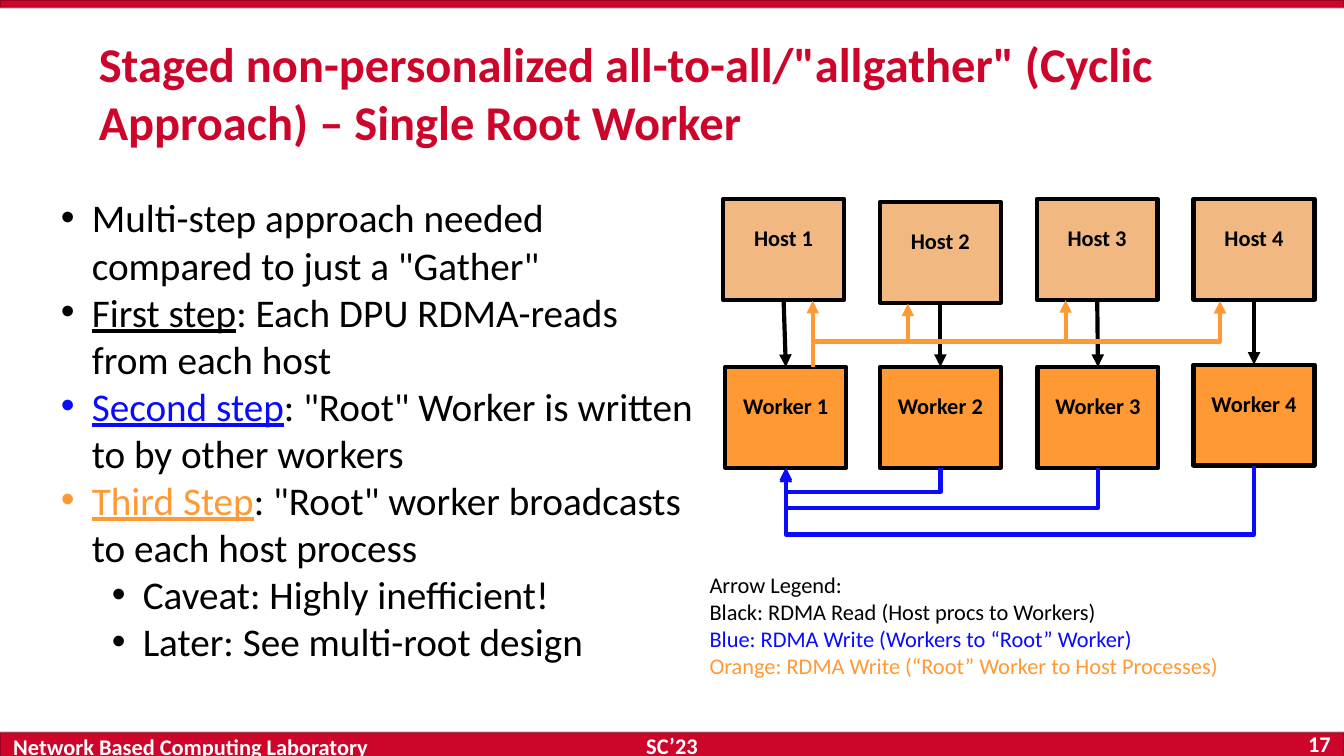
from dataclasses import dataclass

from lxml.etree import SubElement
from pptx import Presentation
from pptx.dml.color import RGBColor
from pptx.enum.shapes import MSO_CONNECTOR, MSO_SHAPE
from pptx.enum.text import MSO_ANCHOR, PP_ALIGN
from pptx.oxml.ns import qn
from pptx.util import Pt


@dataclass(frozen=True)
class Theme:
    font: str = "Calibri"
    red: str = "CD052B"
    black: str = "000000"
    white: str = "FFFFFF"
    blue: str = "0A0AFF"
    orange: str = "FF9933"
    peach: str = "F1B981"
    title: float = 26
    body: float = 21
    small: float = 12
    stroke: float = 2.25


@dataclass(frozen=True)
class Box:
    left: float
    top: float
    width: float
    height: float

    @property
    def center(self) -> float:
        return self.left + self.width / 2

    @property
    def bottom(self) -> float:
        return self.top + self.height

    def lengths(self) -> list:
        return [Pt(value) for value in (self.left, self.top, self.width, self.height)]


@dataclass(frozen=True)
class Run:
    text: str
    color: str = "000000"
    underline: bool = False


@dataclass(frozen=True)
class Line:
    runs: tuple
    level: int = 0


THEME = Theme()
NODE_WIDTH, NODE_HEIGHT = 64.8, 54
INDENTS = (16.6, 43.9)
HANGING = 16.6

HOSTS = [Box(387.4 + 84 * i, top, NODE_WIDTH, NODE_HEIGHT)
         for i, top in enumerate((106.6, 108.2, 106.6, 106.6))]
WORKERS = [Box(left, top, NODE_WIDTH, NODE_HEIGHT) for left, top in
           ((388.6, 196.6), (471.4, 196.6), (555.8, 196.6), (639.4, 195.4))]

BODY = [
    Line((Run('Multi-step approach needed compared to just a "Gather"'),)),
    Line((Run("First step", underline=True), Run(": Each DPU RDMA-reads from each host"))),
    Line((Run("Second step", THEME.blue, True),
          Run(': "Root" Worker is written to by other workers'))),
    Line((Run("Third Step", THEME.orange, True),
          Run(': "Root" worker broadcasts to each host process'))),
    Line((Run("Caveat: Highly inefficient!"),), 1),
    Line((Run("Later: See multi-root design"),), 1),
]
LEGEND = [
    Line((Run("Arrow Legend:"),)),
    Line((Run("Black: RDMA Read (Host procs to Workers)"),)),
    Line((Run("Blue: RDMA Write (Workers to “Root” Worker)", THEME.blue),)),
    Line((Run("Orange: RDMA Write (“Root” Worker to Host Processes)", THEME.orange),)),
]


def apply(target, values: dict) -> None:
    for name, value in values.items():
        setattr(target, name, value)


def add_bullet(paragraph, level: int) -> None:
    paragraph.level = level
    properties = paragraph._p.get_or_add_pPr()
    properties.set("marL", str(Pt(INDENTS[level])))
    properties.set("indent", str(-Pt(HANGING)))
    SubElement(properties, qn("a:buFont"), typeface="Arial")
    SubElement(properties, qn("a:buChar"), char="•")


def add_text(slide, box: Box, lines: list, size: float, bold: bool = False,
             align=PP_ALIGN.LEFT, anchor=MSO_ANCHOR.TOP, bullets: bool = False) -> None:
    frame = slide.shapes.add_textbox(*box.lengths()).text_frame
    apply(frame, {"word_wrap": True, "vertical_anchor": anchor})
    if bullets:
        apply(frame, {"margin_left": Pt(5), "margin_right": Pt(5),
                      "margin_top": Pt(3), "margin_bottom": Pt(3)})
    for index, line in enumerate(lines):
        paragraph = frame.add_paragraph() if index else frame.paragraphs[0]
        paragraph.alignment = align
        if bullets:
            add_bullet(paragraph, line.level)
        for part in line.runs:
            run = paragraph.add_run()
            run.text = part.text
            apply(run.font, {"name": THEME.font, "size": Pt(size), "bold": bold,
                             "underline": part.underline})
            run.font.color.rgb = RGBColor.from_string(part.color)


def add_rectangle(slide, box: Box, fill: str, width: float):
    shape = slide.shapes.add_shape(MSO_SHAPE.RECTANGLE, *box.lengths())
    shape.shadow.inherit = False
    shape.fill.solid()
    shape.fill.fore_color.rgb = RGBColor.from_string(fill)
    shape.line.color.rgb = RGBColor.from_string(THEME.black)
    shape.line.width = Pt(width)
    return shape


def add_bar(slide, box: Box) -> None:
    shape = add_rectangle(slide, box, THEME.red, 1)
    color = shape.line._get_or_add_ln().find(".//" + qn("a:srgbClr"))
    SubElement(color, qn("a:alpha"), val="25000")


def add_node(slide, box: Box, name: str, fill: str) -> None:
    add_rectangle(slide, box, fill, THEME.stroke)
    label = Box(box.left, box.top + 10, box.width, 21.6)
    add_text(slide, label, [Line((Run(name),))], THEME.small, True, PP_ALIGN.CENTER)


def add_arrow(slide, start: tuple, end: tuple, color: str,
              kind=MSO_CONNECTOR.STRAIGHT, bend: float = 0):
    connector = slide.shapes.add_connector(kind, *map(Pt, start + end))
    connector.line.color.rgb = RGBColor.from_string(color)
    connector.line.width = Pt(THEME.stroke)
    SubElement(connector.line._get_or_add_ln(), qn("a:tailEnd"), type="triangle")
    properties = connector._element.spPr
    SubElement(properties, qn("a:effectLst"))
    if bend:
        adjustments = properties.find(qn("a:prstGeom")).get_or_add_avLst()
        SubElement(adjustments, qn("a:gd"), name="adj1", fmla=f"val {round(bend * 100000)}")
    return connector


def add_return_arrow(slide, source: Box, root: Box, drop: float) -> None:
    """Run down from the source, left, and up to the root: an elbow turned by 90 degrees."""
    depth, span = 1, source.center - root.center
    middle_x = (source.center + root.center) / 2
    left, top = middle_x - depth / 2, source.bottom + depth / 2 - span / 2
    connector = add_arrow(slide, (left, top), (left + depth, top + span), THEME.blue,
                          MSO_CONNECTOR.ELBOW, drop / depth)
    connector._element.spPr.find(qn("a:xfrm")).set("rot", str(90 * 60000))


def main() -> None:
    presentation = Presentation()
    apply(presentation, {"slide_width": Pt(720), "slide_height": Pt(405)})
    slide = presentation.slides.add_slide(presentation.slide_layouts[6])

    # Bars and footer
    add_bar(slide, Box(0, 392.4, 720, 13.5))
    add_bar(slide, Box(0, 0, 720, 4.2))
    for box, text, align in (
        (Box(672.4, 391.9, 47.6, 13), "17", PP_ALIGN.RIGHT),
        (Box(0, 391.9, 217.4, 16.2), "Network Based Computing Laboratory", PP_ALIGN.LEFT),
        (Box(270.7, 394.4, 178.6, 10), "SC’23", PP_ALIGN.CENTER),
    ):
        add_text(slide, box, [Line((Run(text, THEME.white),))], THEME.small, True,
                 align, MSO_ANCHOR.MIDDLE)

    # Title and bullets
    title = 'Staged non-personalized all-to-all/"allgather" (Cyclic Approach) – Single Root Worker'
    add_text(slide, Box(45.9, 14.6, 637, 70), [Line((Run(title, THEME.red),))],
             THEME.title, True)
    add_text(slide, Box(27.6, 100.8, 352.8, 262), BODY, THEME.body, bullets=True)

    # Hosts and workers
    for name, boxes, fill in (("Host", HOSTS, THEME.peach), ("Worker", WORKERS, THEME.orange)):
        for number, box in enumerate(boxes, 1):
            add_node(slide, box, f"{name} {number}", fill)

    # Reads from each host
    for host, worker in zip(HOSTS, WORKERS):
        add_arrow(slide, (host.center, host.bottom), (worker.center, worker.top), THEME.black)

    # Writes to the root worker
    root = WORKERS[0]
    for worker, drop in zip(WORKERS[1:], (13, 21.6, 37.3)):
        add_return_arrow(slide, worker, root, drop)

    # Broadcast from the root worker
    trunk, branch = 435.4, 183
    add_arrow(slide, (trunk, root.top), (trunk, 161.2), THEME.orange)
    for x, y in ((486.4, 162.7), (570.9, 160.8), (653.6, 161.3)):
        add_arrow(slide, (trunk, branch), (x, y), THEME.orange, MSO_CONNECTOR.ELBOW, 1)

    # Legend
    add_text(slide, Box(373, 302.4, 337, 65.4), LEGEND, THEME.small)
    presentation.save("out.pptx")


if __name__ == "__main__":
    main()
